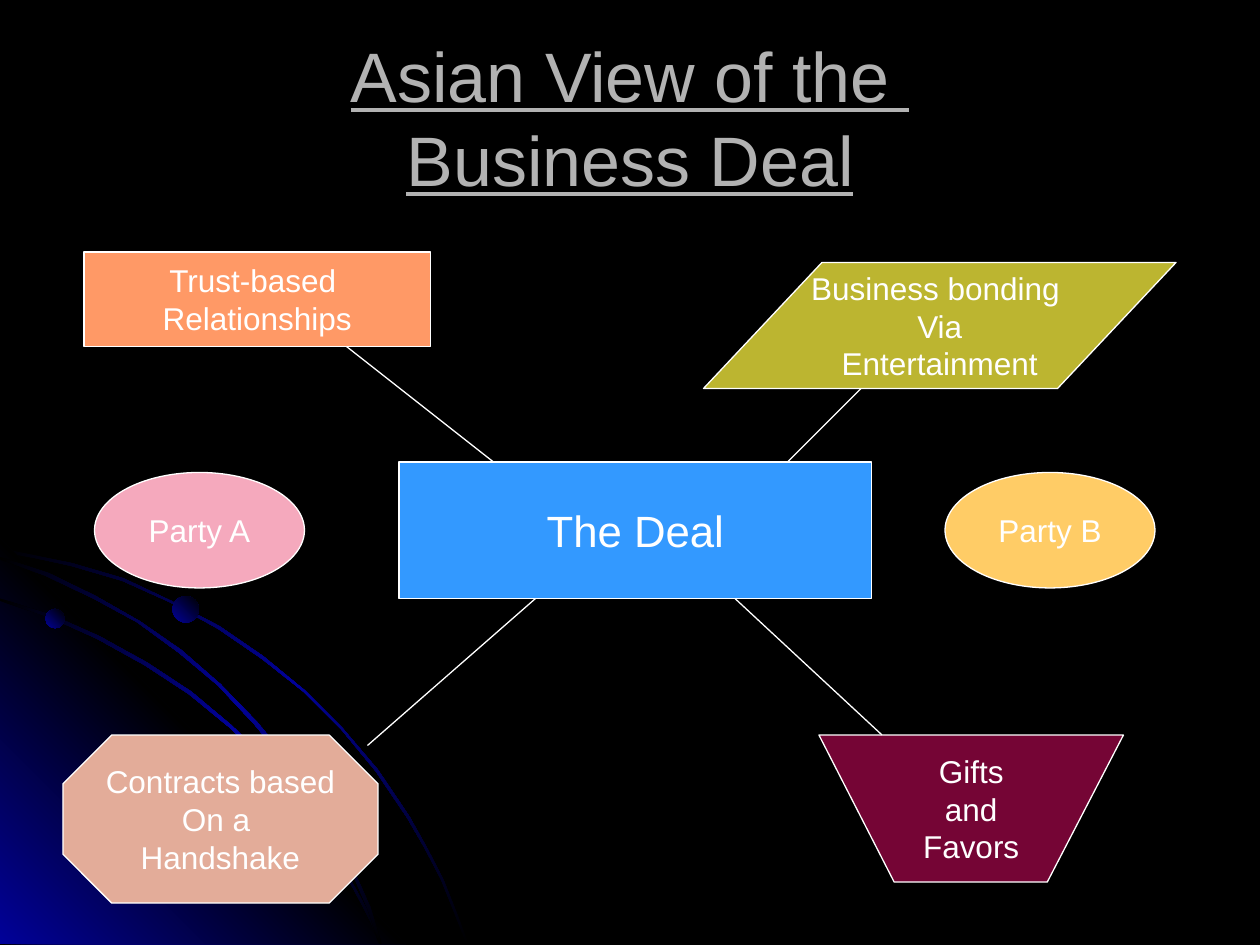
import pptx
import pptx.dml.color
import pptx.enum.shapes
import pptx.enum.text
import pptx.oxml.ns
import pptx.util
from lxml import etree

Pt = pptx.util.Pt
Shape = pptx.enum.shapes.MSO_SHAPE
qn = pptx.oxml.ns.qn

NIGHT = "000000"
BLUE = "010199"
WHITE = "FFFFFF"

OUTER_ARC = [
    (41, 321.8), (20.2, 317.5), (0, 313.2), (0, 315.4), (20.2, 319), (40.3, 323.3),
    (69.8, 331.9), (97.2, 344.2), (124.6, 359.3), (149.8, 376.6), (173.5, 395.3),
    (195.1, 416.9), (214.6, 440.6), (232.6, 467.3), (242.6, 484.6), (252, 502.6),
    (259.2, 520.6), (266.4, 539.3), (267.8, 539.3), (260.6, 520.6), (253.4, 502.6),
    (244.1, 484.6), (234, 466.6), (216, 439.9), (195.8, 416.2), (174.2, 394.6),
    (150.5, 375.1), (125.3, 357.8), (97.9, 343.4), (70.6, 330.5),
]
INNER_ARC = [
    (205.2, 514.1), (211.7, 527), (216.7, 539.3), (218.2, 539.3), (213.1, 525.6),
    (205.9, 512.6), (191.5, 486.7), (174.2, 460.8), (154.8, 436.3), (132.5, 414.7),
    (109.4, 395.3), (84.2, 378.7), (56.9, 363.6), (29.5, 351.4), (0, 342), (0, 343.4),
    (28.1, 352.8), (55.4, 365), (82.8, 380.2), (108, 396.7), (131.8, 416.2),
    (153.4, 437.8), (172.8, 461.5), (190.8, 487.4),
]
MIDDLE_ARC = [
    (0, 318.2), (0, 319.7), (25.9, 329), (53.3, 342), (78.5, 355.7), (102.2, 373),
    (124.6, 391.7), (145.4, 414), (163.4, 435.6), (181.4, 461.5), (192.2, 480.2),
    (201.6, 499.7), (210.2, 519.8), (216.7, 539.3), (218.2, 539.3), (211.7, 518.4),
    (203, 499), (193.7, 478.8), (182.9, 460.1), (164.9, 434.2), (146.9, 412.6),
    (126, 391), (103.7, 371.5), (79.9, 355), (54.7, 340.6), (28.1, 327.6),
]
CORNER = [(232, 539.5), (0, 539.5), (0, 307.5)]
FUNNEL = [(468, 420), (511, 504), (598.5, 504), (642, 420)]


def color(value):
    return pptx.dml.color.RGBColor.from_string(value)


class Board:
    font = "Arial"
    line_width = 0.75

    def __init__(self, page):
        self.page = page
        page.background.fill.solid()
        page.background.fill.fore_color.rgb = color(NIGHT)

    def preset(self, kind, left, top, width, height):
        return self.page.shapes.add_shape(kind, Pt(left), Pt(top), Pt(width), Pt(height))

    def outline(self, points):
        corners = [(Pt(x), Pt(y)) for x, y in points]
        builder = self.page.shapes.build_freeform(*corners[0], scale=1.0)
        builder.add_line_segments(corners[1:], close=True)
        return builder.convert_to_shape()

    def glow(self, shape, colors, angle):
        shape.shadow.inherit = False
        shape.line.fill.background()
        shape.fill.gradient()
        shape.fill.gradient_angle = (360 - angle) % 360
        stops = shape.element.spPr.find(".//" + qn("a:gsLst"))
        stops.clear()
        for index, value in enumerate(colors):
            position = index * 100000 // (len(colors) - 1)
            stop = etree.SubElement(stops, qn("a:gs"), pos=str(position))
            etree.SubElement(stop, qn("a:srgbClr"), val=value)

    def set_text(self, box, text, size, ink=WHITE, wrap=False, underline=None):
        frame = box.text_frame
        frame.text = text
        frame.word_wrap = wrap
        frame.vertical_anchor = pptx.enum.text.MSO_ANCHOR.MIDDLE
        for para in frame.paragraphs:
            para.alignment = pptx.enum.text.PP_ALIGN.CENTER
            for span in para.runs:
                span.font.name = self.font
                span.font.size = Pt(size)
                span.font.color.rgb = color(ink)
                span.font.underline = underline

    def title(self, text, left, top, width, height):
        box = self.page.shapes.add_textbox(Pt(left), Pt(top), Pt(width), Pt(height))
        self.set_text(box, text, 40, "B2B2B2", wrap=True, underline=True)

    def label(self, shape, fill, text, size=18):
        shape.shadow.inherit = False
        shape.fill.solid()
        shape.fill.fore_color.rgb = color(fill)
        shape.line.color.rgb = color(WHITE)
        shape.line.width = Pt(self.line_width)
        self.set_text(shape, text, size)

    def link(self, *ends):
        line = self.page.shapes.add_connector(
            pptx.enum.shapes.MSO_CONNECTOR.STRAIGHT, *[Pt(end) for end in ends])
        line.line.color.rgb = color(WHITE)
        line.line.width = Pt(self.line_width)
        etree.SubElement(line.element.spPr, qn("a:effectLst"))


def main():
    deck = pptx.Presentation()
    deck.slide_width, deck.slide_height = Pt(720), Pt(540)
    board = Board(deck.slides.add_slide(deck.slide_layouts[6]))

    ribbon = [NIGHT, BLUE, NIGHT]
    for points, colors, angle in [
        (OUTER_ARC, ribbon, 45),
        (CORNER, [BLUE, NIGHT, BLUE], 315),
        (INNER_ARC, ribbon, 45),
        (MIDDLE_ARC, ribbon, 45),
    ]:
        board.glow(board.outline(points), colors, angle)
    for left, top, size, angle in [
        (26, 348, 11, 315), (192.2, 485.3, 11.5, 45), (98.6, 340.6, 15.1, 315),
    ]:
        board.glow(board.preset(Shape.OVAL, left, top, size, size), [BLUE, NIGHT], angle)

    board.title("Asian View of the \vBusiness Deal", 36, 21.6, 648, 90)

    board.label(board.preset(Shape.RECTANGLE, 228, 264, 270, 78), "3399FF", "The Deal", 25)
    for left, fill, text in [(54, "F5A9BD", "Party A"), (540, "FFCC66", "Party B")]:
        board.label(board.preset(Shape.OVAL, left, 270, 120, 66), fill, text)
    board.label(board.preset(Shape.RECTANGLE, 48, 144, 198, 54),
                "FF9966", "Trust-based \nRelationships")
    bonding = board.preset(Shape.PARALLELOGRAM, 402, 150, 270, 72)
    bonding.adjustments[0] = 0.94
    board.label(bonding, "BCB530", "Business bonding \nVia\nEntertainment")
    contracts = board.preset(Shape.OCTAGON, 36, 420, 180, 96)
    contracts.adjustments[0] = 0.29
    board.label(contracts, "E3AC99", "Contracts based\nOn a \nHandshake")
    board.label(board.outline(FUNNEL), "750535", "Gifts\nand\nFavors")

    for ends in [
        (210, 426, 306, 342), (420, 342, 504, 420),
        (198, 198, 282, 264), (492, 222, 450, 264),
    ]:
        board.link(*ends)

    deck.save("out.pptx")


if __name__ == "__main__":
    main()
